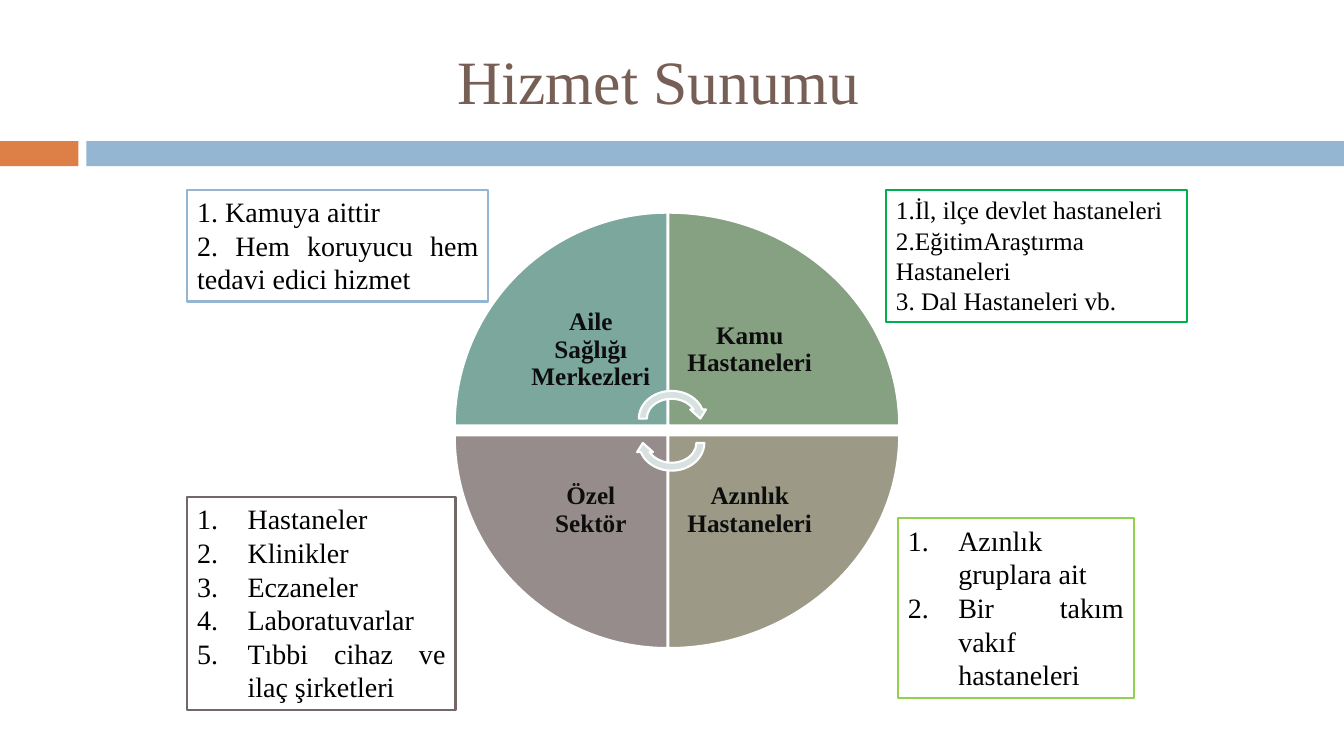
from lxml import etree
from pptx import Presentation
from pptx import util as u
from pptx.dml.color import RGBColor
from pptx.enum import shapes, text
from pptx.oxml.ns import qn

Cm, Pt = u.Cm, u.Pt
FORM = shapes.MSO_SHAPE
ALIGN = text.PP_ALIGN
FONT = "Times New Roman"
HUES = {
    "title": "775F55", "ink": "000000", "dark": "0D0D0D", "white": "FFFFFF",
    "orange": "DD8047", "blue": "94B6D2", "teal": "7BA79D", "sage": "86A181",
    "khaki": "9C9A86", "mauve": "968C8C", "mist": "D7E1DF",
    "grey": "726868", "green": "00B050", "lime": "92D050",
}


def hue(name):
    return RGBColor.from_string(HUES[name])


def add_run(para, words, size, color, bold=False):
    run = para.add_run()
    run.text = words
    font = run.font
    font.name, font.size, font.bold = FONT, Pt(size), bold
    font.color.rgb = hue(color)


def add_form(slide, kind, box, fill, line=None, turn=0):
    form = slide.shapes.add_shape(kind, *map(Cm, box))
    form.shadow.inherit = False
    form.rotation = turn
    form.fill.solid()
    form.fill.fore_color.rgb = hue(fill)
    if line:
        form.line.color.rgb = hue(line)
        form.line.width = Pt(1.5)
    else:
        form.line.fill.background()
    return form


def set_title(slide, words):
    title = slide.shapes.title
    title.left, title.top, title.width, title.height = map(
        Cm, (5.16, 0.43, 22.86, 3.18))
    frame = title.text_frame
    frame.auto_size = text.MSO_AUTO_SIZE.NONE
    frame.vertical_anchor = text.MSO_ANCHOR.MIDDLE
    para = frame.paragraphs[0]
    para.alignment = ALIGN.CENTER
    add_run(para, words, 44, "title")


def add_wedge(slide, box, fill, turn):
    """Place a quarter so that it covers box after it is turned."""
    left, top, wide, high = box
    if turn % 180:
        shift = (wide - high) / 2
        box = (left + shift, top - shift, high, wide)
    add_form(slide, FORM.PIE_WEDGE, box, fill, "white", turn)


def add_label(slide, box, words):
    frame = slide.shapes.add_textbox(*map(Cm, box)).text_frame
    frame.word_wrap = True
    frame.vertical_anchor = text.MSO_ANCHOR.MIDDLE
    frame.margin_left = frame.margin_right = Cm(0.36)
    frame.margin_top = frame.margin_bottom = Cm(0.36)
    para = frame.paragraphs[0]
    para.alignment = ALIGN.CENTER
    para.line_spacing = 0.9
    para.space_after = Pt(6.3)
    add_run(para, words, 18, "dark", True)


def add_number(para):
    props = para._p.get_or_add_pPr()
    props.set("marL", str(Cm(1.27)))
    props.set("indent", str(-Cm(1.27)))
    etree.SubElement(props, qn("a:buFont"), typeface="+mj-lt")
    etree.SubElement(props, qn("a:buAutoNum"), type="arabicPeriod")


def add_note(slide, box, line, size, items, listed=False):
    frame = add_form(slide, FORM.RECTANGLE, box, "white", line).text_frame
    frame.word_wrap = True
    frame.auto_size = text.MSO_AUTO_SIZE.SHAPE_TO_FIT_TEXT
    frame.vertical_anchor = text.MSO_ANCHOR.TOP
    for i, item in enumerate(items):
        para = frame.add_paragraph() if i else frame.paragraphs[0]
        para.alignment = ALIGN.JUSTIFY
        if listed:
            add_number(para)
        add_run(para, item, size, "ink")


def main():
    deck = Presentation()
    deck.slide_width, deck.slide_height = Cm(33.87), Cm(19.05)
    slide = deck.slides.add_slide(deck.slide_layouts[5])

    # Title and band
    set_title(slide, "Hizmet Sunumu")
    add_form(slide, FORM.RECTANGLE, (0, 3.56, 1.98, 0.63), "orange")
    add_form(slide, FORM.RECTANGLE, (2.18, 3.56, 31.69, 0.63), "blue")

    # Wheel: left, width, label left, label width; then top, label top
    west, east = (11.46, 5.36, 13, 3.78), (16.84, 5.82, 16.84, 4.11)
    north, south = (5.36, 6.93), (10.97, 10.97)
    quarters = [
        (west, north, "teal", "Aile Sağlığı Merkezleri"),
        (east, north, "sage", "Kamu Hastaneleri"),
        (east, south, "khaki", "Azınlık Hastaneleri"),
        (west, south, "mauve", "Özel Sektör"),
    ]
    for i, (col, row, fill, words) in enumerate(quarters):
        left, wide, inner, span = col
        top, mid = row
        add_wedge(slide, (left, top, wide, 5.36), fill, 90 * i)
        add_label(slide, (inner, mid, span, 3.78), words)

    # Arrows at the hub
    for top, turn in ((9.75, 0), (10.36, 180)):
        add_form(slide, FORM.CIRCULAR_ARROW, (16, top, 1.85, 1.6),
                 "mist", "white", turn)

    # Notes around the wheel
    add_note(slide, (4.72, 4.78, 7.59, 2.82), "blue", 20, [
        "1. Kamuya aittir", "2. Hem koruyucu hem tedavi edici hizmet"])
    add_note(slide, (4.72, 12.52, 6.76, 5.38), "grey", 20, [
        "Hastaneler", "Klinikler", "Eczaneler", "Laboratuvarlar",
        "Tıbbi cihaz ve ilaç şirketleri"], True)
    add_note(slide, (22.33, 4.78, 7.59, 3.33), "green", 18, [
        "1.İl, ilçe devlet hastaneleri", "2.EğitimAraştırma Hastaneleri",
        "3. Dal Hastaneleri vb."])
    add_note(slide, (22.63, 13.06, 5.94, 4.52), "lime", 20, [
        "Azınlık gruplara ait", "Bir takım vakıf hastaneleri"], True)

    deck.save("out.pptx")


if __name__ == "__main__":
    main()
